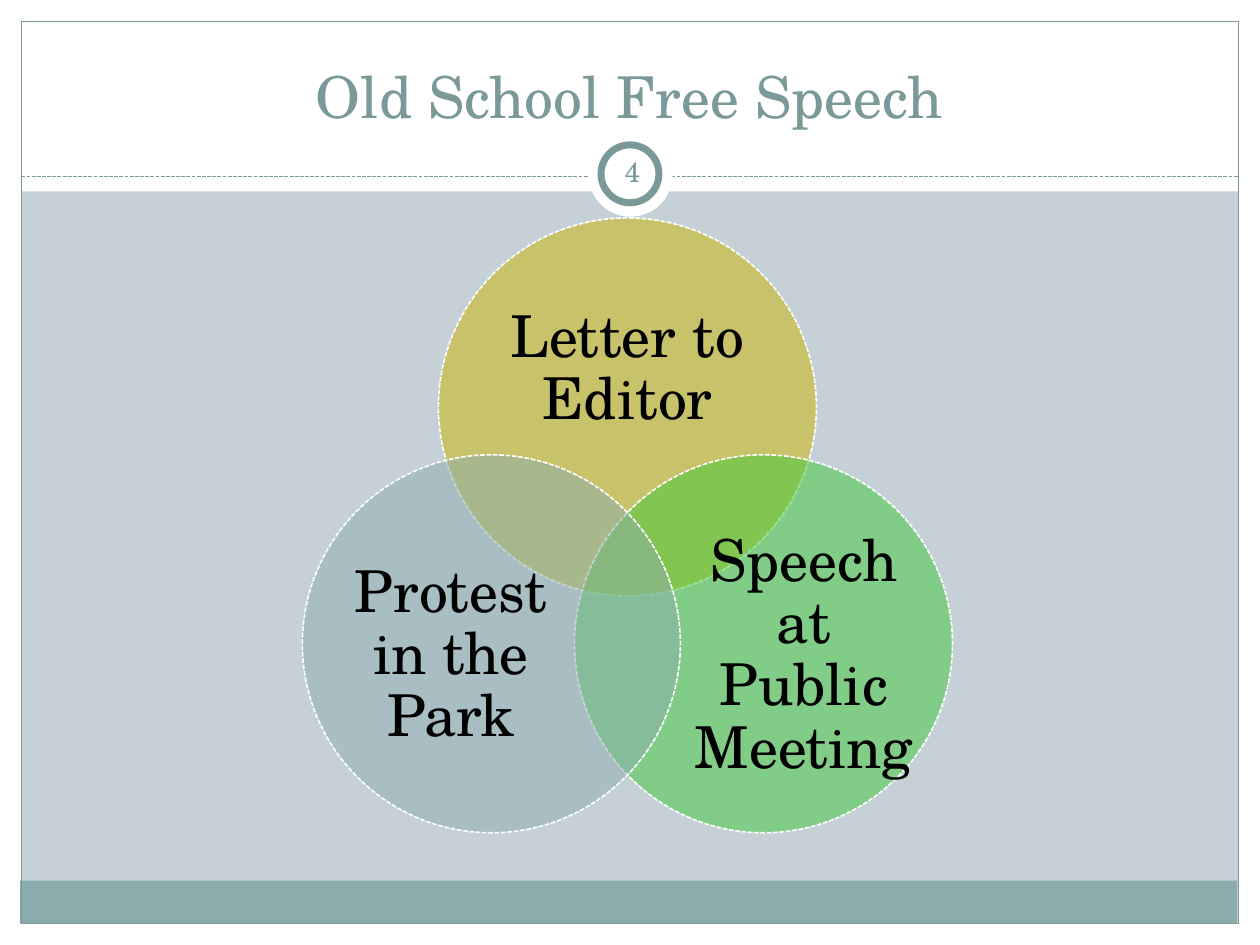
"""Build the Old School Free Speech slide with its three-circle Venn diagram."""
from dataclasses import dataclass
from typing import Optional

from lxml.etree import SubElement
from pptx import Presentation
from pptx.dml.color import RGBColor
from pptx.enum.dml import MSO_LINE_DASH_STYLE as Dash
from pptx.enum.shapes import MSO_CONNECTOR as Connector, MSO_SHAPE as Shape
from pptx.enum.text import MSO_ANCHOR as Anchor, PP_ALIGN as Align
from pptx.oxml.ns import qn
from pptx.shapes.autoshape import Shape as AutoShape
from pptx.util import Inches, Pt

FONT = "TeX Gyre Schola"
WHITE = RGBColor(0xFF, 0xFF, 0xFF)
BLACK = RGBColor(0x00, 0x00, 0x00)
MIST = RGBColor(0xC5, 0xD1, 0xD7)
SLATE = RGBColor(0x7C, 0x99, 0x9A)
TEAL = RGBColor(0x8C, 0xAD, 0xAE)
GOLD = RGBColor(0xCC, 0xB4, 0x00)
GREEN = RGBColor(0x3E, 0xCB, 0x38)
CIRCLE_SIZE = 3


@dataclass(frozen=True)
class Box:
    left: float
    top: float
    width: float
    height: float

    def lengths(self) -> list[Inches]:
        return [Inches(v) for v in (self.left, self.top, self.width, self.height)]


@dataclass(frozen=True)
class Topic:
    label: str
    color: RGBColor
    left: float
    top: float
    label_box: Box


BANDS = [
    (Box(0, 7.33, 10, 0.17), WHITE),
    (Box(0, 0, 10, 1.52), WHITE),
    (Box(0, 0, 0.17, 7.5), WHITE),
    (Box(9.83, 0, 0.17, 7.5), WHITE),
    (Box(0.16, 6.99, 9.66, 0.34), TEAL),
]
TOPICS = [
    Topic("Letter to Editor", GOLD, 3.48, 1.73, Box(3.88, 2.26, 2.2, 1.35)),
    Topic("Speech at Public Meeting", GREEN, 4.56, 3.61, Box(5.48, 4.38, 1.8, 1.65)),
    Topic("Protest in the Park", TEAL, 2.4, 3.61, Box(2.68, 4.38, 1.8, 1.65)),
]


def add_figure(slide, kind: Shape, box: Box, fill: Optional[RGBColor] = None,
               line: Optional[RGBColor] = None, weight: float = 0.75) -> AutoShape:
    figure = slide.shapes.add_shape(kind, *box.lengths())
    figure.shadow.inherit = False
    if fill is None:
        figure.fill.background()
    else:
        figure.fill.solid()
        figure.fill.fore_color.rgb = fill
    if line is None:
        figure.line.fill.background()
    else:
        figure.line.color.rgb = line
        figure.line.width = Pt(weight)
    return figure


def add_text(slide, text: str, box: Box, size: float, color: RGBColor,
             anchor: Anchor = Anchor.MIDDLE, inset: float = 0, spacing: float = 1) -> None:
    frame = slide.shapes.add_textbox(*box.lengths()).text_frame
    frame.word_wrap = True
    frame.vertical_anchor = anchor
    frame.margin_left = frame.margin_right = Inches(inset)
    frame.margin_top = frame.margin_bottom = Inches(inset)
    paragraph = frame.paragraphs[0]
    paragraph.text = text
    paragraph.alignment = Align.CENTER
    paragraph.line_spacing = spacing
    paragraph.font.name = FONT
    paragraph.font.size = Pt(size)
    paragraph.font.color.rgb = color


def add_divider(slide) -> None:
    divider = slide.shapes.add_connector(
        Connector.STRAIGHT, Inches(0.17), Inches(1.4), Inches(9.83), Inches(1.4))
    divider.line.color.rgb = SLATE
    divider.line.width = Pt(0.75)
    divider.line.dash_style = Dash.SQUARE_DOT
    SubElement(divider.element.spPr, qn("a:effectLst"))


def add_topic(slide, topic: Topic) -> None:
    box = Box(topic.left, topic.top, CIRCLE_SIZE, CIRCLE_SIZE)
    circle = add_figure(slide, Shape.OVAL, box, topic.color, WHITE, 0.9)
    circle.line.dash_style = Dash.SQUARE_DOT
    fill_color = circle.element.spPr.find(qn("a:solidFill"))[0]
    SubElement(fill_color, qn("a:alpha"), val="50000")
    add_text(slide, topic.label, topic.label_box, 33, BLACK, spacing=0.9)


def main() -> None:
    deck = Presentation()
    deck.slide_width, deck.slide_height = Inches(10), Inches(7.5)
    slide = deck.slides.add_slide(deck.slide_layouts[6])
    slide.background.fill.solid()
    slide.background.fill.fore_color.rgb = MIST

    for box, color in BANDS:
        add_figure(slide, Shape.RECTANGLE, box, color)
    add_figure(slide, Shape.RECTANGLE, Box(0.17, 0.17, 9.66, 7.16), line=SLATE)
    add_divider(slide)
    add_figure(slide, Shape.OVAL, Box(4.67, 1.05, 0.67, 0.67), WHITE)
    add_figure(slide, Shape.OVAL, Box(4.77, 1.15, 0.46, 0.46), WHITE, SLATE, 4)
    add_text(slide, "Old School Free Speech", Box(0.33, 0.25, 9.33, 0.83), 33, SLATE,
             Anchor.BOTTOM, 0.05)
    for topic in TOPICS:
        add_topic(slide, topic)
    add_text(slide, "4", Box(4.77, 1.12, 0.5, 0.48), 16, SLATE, inset=0.05)
    deck.save("out.pptx")


if __name__ == "__main__":
    main()
